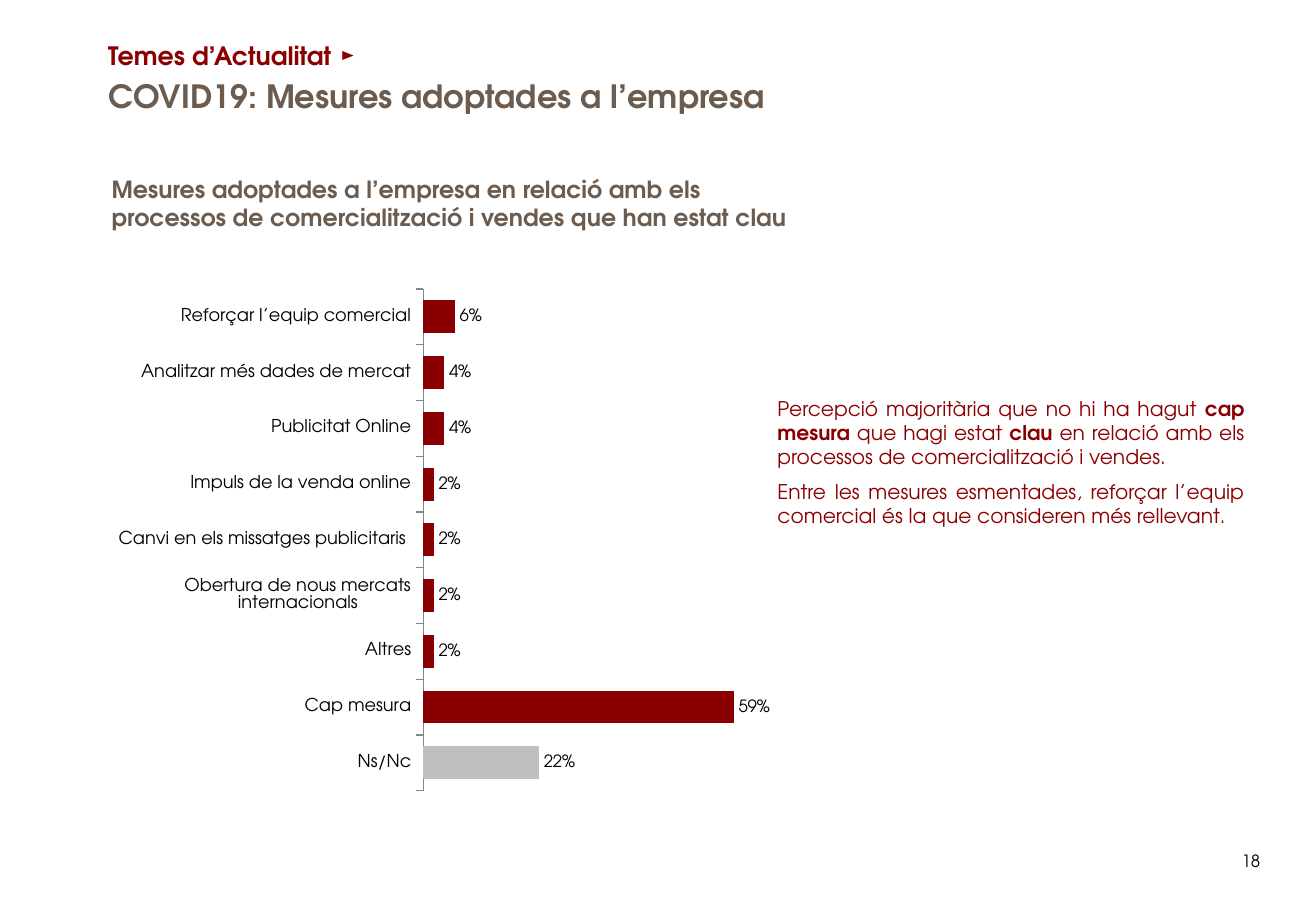
"""Build the slide on commercial measures taken during COVID19."""
from lxml import etree
from pptx import Presentation
from pptx.chart.data import CategoryChartData
from pptx.dml.color import RGBColor
from pptx.enum.chart import XL_CHART_TYPE as ChartType
from pptx.enum.chart import XL_LABEL_POSITION as LabelPosition
from pptx.enum.chart import XL_TICK_LABEL_POSITION as TickLabels
from pptx.enum.chart import XL_TICK_MARK as TickMark
from pptx.enum.text import MSO_ANCHOR as Anchor
from pptx.enum.text import MSO_AUTO_SIZE as AutoSize
from pptx.enum.text import PP_ALIGN as Align
from pptx.oxml.ns import qn
from pptx.util import Inches, Pt

FONT = "TeX Gyre Adventor"
RED, BROWN, BLACK, GREY, AXIS = "8A0000", "6B5C4F", "000000", "BFBFBF", "868686"
MEASURES = {
    "Reforçar l’equip comercial": 0.06,
    "Analitzar més dades de mercat": 0.04,
    "Publicitat Online": 0.04,
    "Impuls de la venda online": 0.02,
    "Canvi en els missatges publicitaris ": 0.02,
    "Obertura de nous mercats internacionals": 0.02,
    "Altres": 0.02,
    "Cap mesura": 0.59,
    "Ns/Nc": 0.22,
}
FINDINGS = (
    "Percepció majoritària que no hi ha hagut **cap mesura** que hagi estat "
    "**clau** en relació amb els processos de comercialització i vendes.",
    "Entre les mesures esmentades, reforçar l’equip comercial és la que "
    "consideren més rellevant.",
)


def rgb(value):
    return RGBColor.from_string(value)


def set_font(font, size, color, bold=False):
    font.name, font.size, font.bold = FONT, Pt(size), bold
    font.color.rgb = rgb(color)


def place(shape, left, top, width, height):
    shape.left, shape.top = Inches(left), Inches(top)
    shape.width, shape.height = Inches(width), Inches(height)


def write(shape, *paragraphs, size, color, bold=False, align=Align.LEFT,
          anchor=Anchor.TOP, gap=0):
    """Fill a shape with paragraphs, where ** switches bold on and off."""
    frame = shape.text_frame
    frame.word_wrap, frame.auto_size = True, AutoSize.NONE
    frame.vertical_anchor = anchor
    for index, text in enumerate(paragraphs):
        paragraph = frame.add_paragraph() if index else frame.paragraphs[0]
        paragraph.alignment = align
        paragraph.space_before = Pt(gap if index else 0)
        for part, words in enumerate(text.split("**")):
            run = paragraph.add_run()
            run.text = words
            set_font(run.font, size, color, bold or part % 2 == 1)


def add_text(slide, box, *paragraphs, **style):
    write(slide.shapes.add_textbox(*map(Inches, box)), *paragraphs, **style)


def set_plot_area(chart, **fractions):
    plot_area = chart.element.find(f".//{qn('c:plotArea')}")
    for layout in plot_area.findall(qn("c:layout")):
        plot_area.remove(layout)
    layout = etree.Element(qn("c:layout"))
    plot_area.insert(0, layout)
    manual = etree.SubElement(layout, qn("c:manualLayout"))
    settings = {"layoutTarget": "inner", "xMode": "edge", "yMode": "edge"}
    for tag, value in {**settings, **fractions}.items():
        etree.SubElement(manual, qn(f"c:{tag}")).set("val", str(value))


def add_measures_chart(slide, box):
    figures = CategoryChartData(number_format="0%")
    figures.categories = MEASURES.keys()
    figures.add_series("Series 1", MEASURES.values())
    chart = slide.shapes.add_chart(
        ChartType.BAR_CLUSTERED, *map(Inches, box), figures).chart
    chart.has_legend = chart.has_title = False
    set_font(chart.font, 10, BLACK)
    set_plot_area(chart, x=0.39, y=0.05, w=0.52, h=0.9)

    names = chart.category_axis
    names.reverse_order = True
    names.has_major_gridlines = False
    names.major_tick_mark, names.minor_tick_mark = TickMark.OUTSIDE, TickMark.NONE
    names.tick_label_position = TickLabels.NEXT_TO_AXIS
    names.format.line.color.rgb = rgb(AXIS)
    set_font(names.tick_labels.font, 10.5, BLACK)

    shares = chart.value_axis
    shares.minimum_scale, shares.maximum_scale = 0, 0.82
    shares.has_major_gridlines = False
    shares.visible = False

    plot = chart.plots[0]
    plot.gap_width, plot.vary_by_categories = 70, False
    bars = plot.series[0]
    bars.invert_if_negative = False
    unanswered = bars.points[len(MEASURES) - 1]
    for part, color in ((bars, RED), (unanswered, GREY)):
        part.format.fill.solid()
        part.format.fill.fore_color.rgb = rgb(color)

    labels = bars.data_labels
    labels.show_value = True
    labels.position = LabelPosition.OUTSIDE_END
    labels.number_format, labels.number_format_is_linked = "0%", False
    set_font(labels.font, 10, BLACK)


def main():
    deck = Presentation()
    deck.slide_width, deck.slide_height = Inches(10.83), Inches(7.5)
    slide = deck.slides.add_slide(deck.slide_layouts[5])

    title = slide.shapes.title
    place(title, 0.79, 0.63, 7.95, 0.31)
    write(title, "COVID19: Mesures adoptades a l’empresa",
          size=19, color=BROWN, bold=True, anchor=Anchor.MIDDLE)
    add_text(slide, (0.79, 0.28, 9.56, 0.36), "Temes d’Actualitat ►",
             size=15, color=RED, bold=True, anchor=Anchor.MIDDLE)
    add_text(slide, (0.82, 1.39, 5.93, 0.57),
             "Mesures adoptades a l’empresa en relació amb els processos de "
             "comercialització i vendes que han estat clau",
             size=14, color=BROWN, bold=True)
    add_measures_chart(slide, (0.82, 2.15, 6.83, 4.59))
    add_text(slide, (6.3, 3.21, 4.04, 1.19), *FINDINGS,
             size=12, color=RED, align=Align.JUSTIFY, gap=6)
    add_text(slide, (10.12, 6.95, 0.67, 0.4), "18", size=10, color=BLACK)
    deck.save("out.pptx")


if __name__ == "__main__":
    main()
